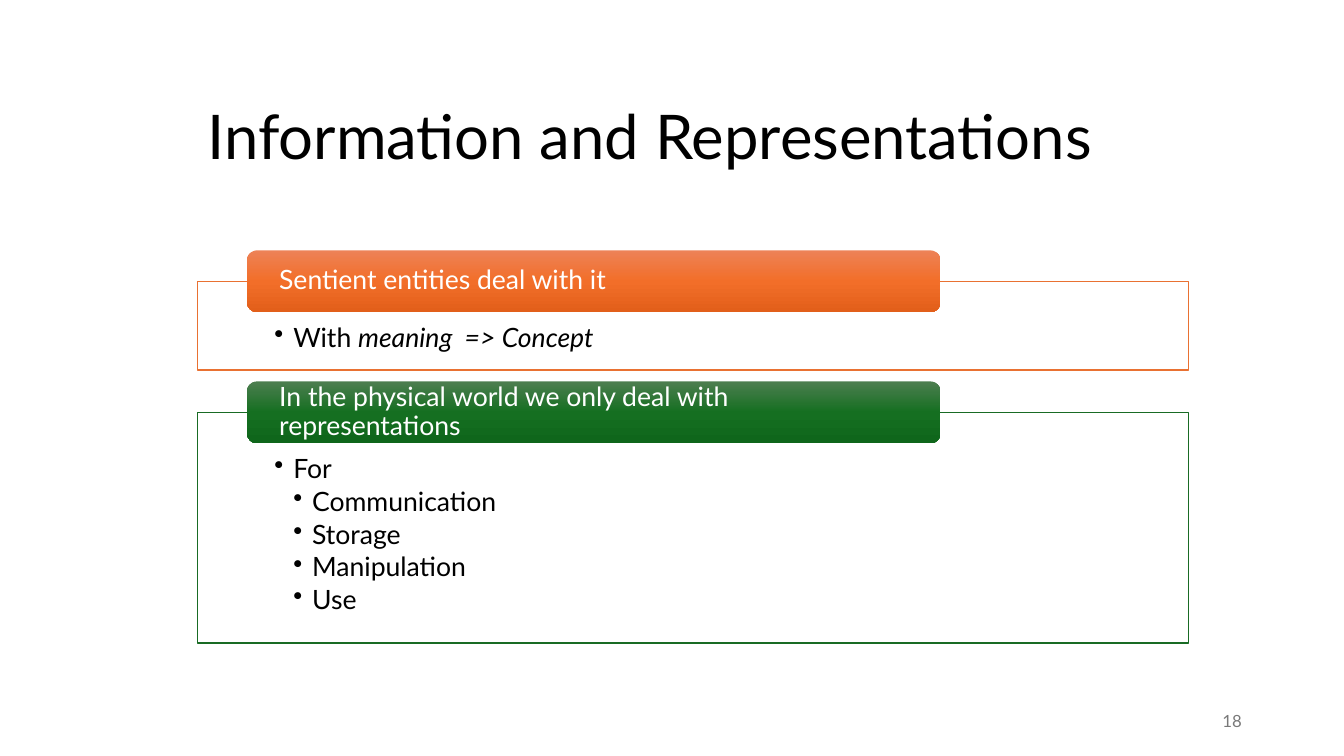
from lxml.etree import SubElement
from pptx import Presentation
from pptx.dml.color import RGBColor
from pptx.enum.shapes import MSO_SHAPE
from pptx.enum.text import MSO_ANCHOR, PP_ALIGN
from pptx.oxml.ns import qn
from pptx.util import Pt

COLORS = {
    "text": "000000",
    "light": "FFFFFF",
    "muted": "797979",
    "orange": "E97132",
    "green": "196B24",
}
GRADIENTS = {
    "orange": ("ED8257", "F26E29", "E25F1A"),
    "green": ("4D7E50", "156F21", "0F661B"),
}
LEFT, WIDTH = 141.1, 707.8
HEADER_LEFT, HEADER_WIDTH, HEADER_HEIGHT = 176.4, 495.4, 44.2
OVERLAP = 22.1
INDENT = 13.5
SECTIONS = [
    ("orange", 200.9, 63.4, "Sentient entities deal with it",
     [(1, ["With ", "meaning  => Concept"])]),
    ("green", 294.5, 164.9,
     "In the physical world we only deal with representations",
     [(1, ["For"]), (2, ["Communication"]), (2, ["Storage"]),
      (2, ["Manipulation"]), (2, ["Use"])]),
]


class SlideBuilder:
    font = "Lato"
    body_size = 19

    def __init__(self, slide):
        self.slide = slide

    def frame(self, sp, margins, anchor):
        tf = sp.text_frame
        tf.word_wrap = True
        tf.vertical_anchor = anchor
        tf.margin_left, tf.margin_top, tf.margin_right, tf.margin_bottom = map(Pt, margins)
        return tf

    def style(self, p, size, color, align=PP_ALIGN.LEFT, spacing=0.9):
        p.alignment = align
        p.line_spacing = spacing
        for r in p.runs:
            r.font.name = self.font
            r.font.size = Pt(size)
            r.font.color.rgb = RGBColor.from_string(COLORS[color])

    def shape(self, kind, *box):
        sp = self.slide.shapes.add_shape(kind, *map(Pt, box))
        sp.shadow.inherit = False
        return sp

    def label(self, text, box, size, color, **options):
        sp = self.slide.shapes.add_textbox(*map(Pt, box))
        tf = self.frame(sp, (7.2, 3.6, 7.2, 3.6), MSO_ANCHOR.MIDDLE)
        tf.text = text
        self.style(tf.paragraphs[0], size, color, **options)

    def bullet(self, p, level):
        p.level = level
        pPr = p._p.get_or_add_pPr()
        pPr.set("marL", str(Pt(INDENT * level)))
        pPr.set("indent", str(-Pt(INDENT)))
        SubElement(pPr, qn("a:buChar"), char="•")

    def panel(self, color, top, height, items):
        sp = self.shape(MSO_SHAPE.RECTANGLE, LEFT, top, WIDTH, height)
        sp.fill.solid()
        sp.fill.fore_color.rgb = RGBColor.from_string(COLORS["light"])
        sp.line.color.rgb = RGBColor.from_string(COLORS[color])
        sp.line.width = Pt(1)
        tf = self.frame(sp, (54.9, 31, 54.9, 10.7), MSO_ANCHOR.TOP)
        for i, (level, parts) in enumerate(items):
            p = tf.add_paragraph() if i else tf.paragraphs[0]
            for j, part in enumerate(parts):
                r = p.add_run()
                r.text = part
                r.font.italic = j > 0
            self.style(p, self.body_size, "text")
            p.space_after = Pt(self.body_size * 0.15)
            self.bullet(p, level)

    def header(self, color, top, text):
        sp = self.shape(MSO_SHAPE.ROUNDED_RECTANGLE,
                        HEADER_LEFT, top, HEADER_WIDTH, HEADER_HEIGHT)
        sp.adjustments[0] = 0.1667
        sp.line.fill.background()
        sp.fill.gradient()
        sp.fill.gradient_angle = 270
        stops = next(sp.element.iter(qn("a:gsLst")))
        stops.clear()
        for i, value in enumerate(GRADIENTS[color]):
            gs = SubElement(stops, qn("a:gs"), pos=str(i * 50000))
            SubElement(gs, qn("a:srgbClr"), val=value)
        tf = self.frame(sp, (20.9, 0, 20.9, 0), MSO_ANCHOR.MIDDLE)
        tf.text = text
        self.style(tf.paragraphs[0], self.body_size, "light")


def main():
    prs = Presentation()
    prs.slide_width, prs.slide_height = Pt(960), Pt(540)
    builder = SlideBuilder(prs.slides.add_slide(prs.slide_layouts[6]))
    builder.label("Information and Representations",
                  (LEFT, 49, 764.6, 100.8), 44, "text")
    for color, top, height, heading, items in SECTIONS:
        builder.panel(color, top, height, items)
        builder.header(color, top - OVERLAP, heading)
    builder.label("18", (678.2, 500.4, 216, 28.8), 12, "muted",
                  align=PP_ALIGN.RIGHT, spacing=1.0)
    prs.save("out.pptx")


if __name__ == "__main__":
    main()
